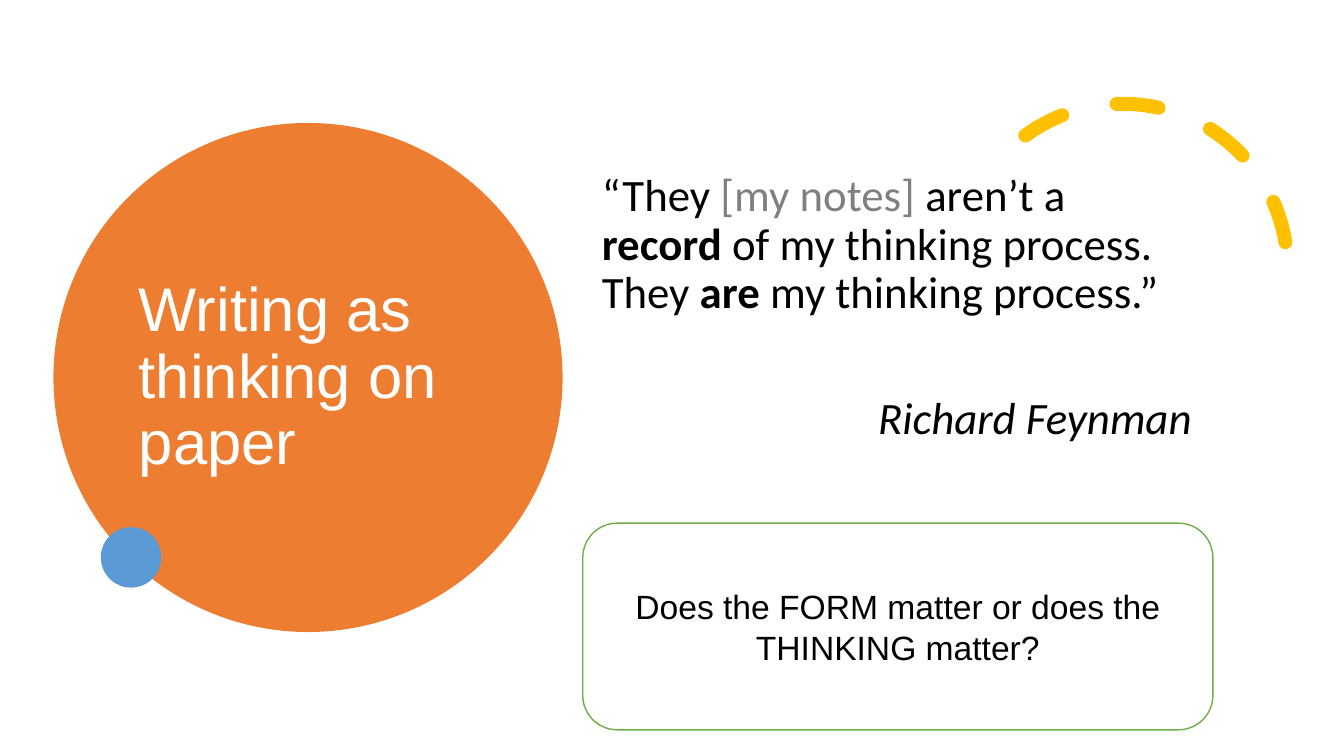
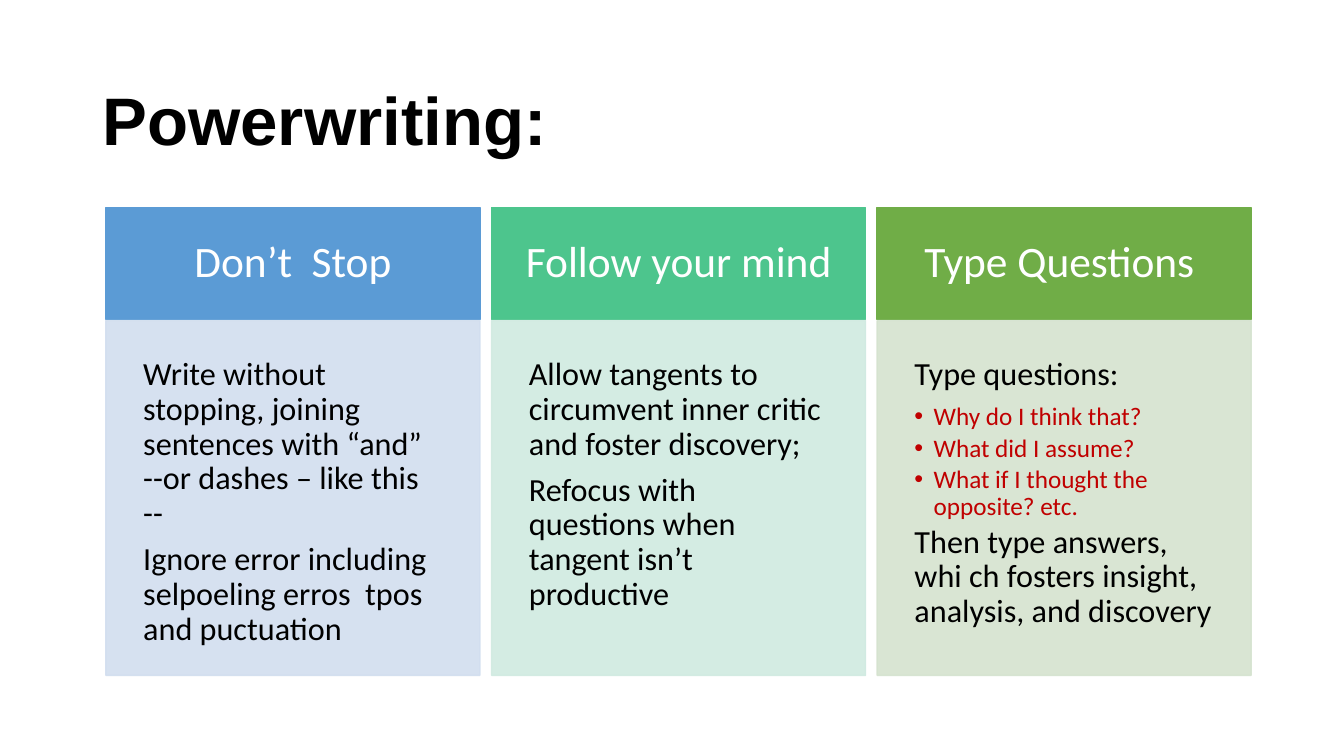
"""Builds two slides on writing as thinking, saved as out.pptx."""
from lxml.etree import SubElement
from pptx import Presentation
from pptx.dml.color import RGBColor as RGB
from pptx.enum.dml import MSO_LINE
from pptx.enum.shapes import MSO_SHAPE as SHAPE
from pptx.enum.text import MSO_ANCHOR as ANCHOR, PP_ALIGN as ALIGN
from pptx.oxml.ns import qn
from pptx.util import Inches, Pt

COLORS = {
    "white": "FFFFFF", "black": "000000", "gray": "808080", "red": "C00000",
    "orange": "ED7D31", "gold": "FFC000", "blue": "5B9BD5", "teal": "4DC58D",
    "green": "70AD47", "pale_blue": "D2DEEF", "pale_teal": "D0EAE1",
    "pale_green": "D5E3CF",
}
SLIDE_W, SLIDE_H = 13.33, 7.5
HEAD_FONT, BODY_FONT = "Arial", "Calibri"
COL_LEFT, COL_W, COL_SPAN = 1.05, 3.71, 11.36
HEADER_TOP, HEADER_H, BODY_TOP, BODY_H = 2.06, 1.11, 3.18, 3.52


def rgb(name):
    """Return the named colour."""
    return RGB.from_string(COLORS[name])


def set_alpha(fill_parent, percent):
    """Make the solid colours below an element partly opaque."""
    for clr in fill_parent.iter(qn("a:srgbClr")):
        SubElement(clr, qn("a:alpha"), val=str(percent * 1000))


def add_shape(slide, kind, box, fill=None, line=None, width=1, alpha=None):
    """Add a flat preset shape."""
    sp = slide.shapes.add_shape(kind, *map(Inches, box))
    sp.shadow.inherit = False
    if fill:
        sp.fill.solid()
        sp.fill.fore_color.rgb = rgb(fill)
    else:
        sp.fill.background()
    if line:
        sp.line.color.rgb = rgb(line)
        sp.line.width = Pt(width)
    else:
        sp.line.fill.background()
    if alpha:
        set_alpha(sp._element.spPr, alpha)
    return sp


def set_frame(sp, anchor, inset=None):
    """Prepare a wrapped text frame and return it."""
    tf = sp.text_frame
    tf.word_wrap = True
    tf.vertical_anchor = anchor
    if inset is not None:
        tf.margin_left = tf.margin_right = Inches(inset)
        tf.margin_top = tf.margin_bottom = Inches(inset)
    return tf


def add_text_box(slide, box, anchor=ANCHOR.TOP):
    """Add a text box and return its frame."""
    return set_frame(slide.shapes.add_textbox(*map(Inches, box)), anchor)


def add_paragraph(tf, align=ALIGN.LEFT, spacing=0.9, before=0, after=0):
    """Return the unused first paragraph or a new one, formatted."""
    p = tf.paragraphs[0]
    if p.runs:
        p = tf.add_paragraph()
    p.alignment = align
    p.line_spacing = spacing
    p.space_before, p.space_after = Pt(before), Pt(after)
    return p


def add_run(p, text, size, font=BODY_FONT, color="black", bold=False, italic=False):
    """Append a formatted run."""
    r = p.add_run()
    r.text = text
    r.font.size, r.font.name = Pt(size), font
    r.font.bold, r.font.italic = bold, italic
    r.font.color.rgb = rgb(color)


def add_title(slide, box, text, size, **style):
    """Add a slide title, centred vertically in its box."""
    tf = add_text_box(slide, box, ANCHOR.MIDDLE)
    add_run(add_paragraph(tf), text, size, HEAD_FONT, **style)


def add_bullet(tf, text):
    """Append a small red bulleted line."""
    p = add_paragraph(tf, after=3)
    pPr = p._p.get_or_add_pPr()
    indent = Inches(0.19)
    pPr.set("marL", str(indent))
    pPr.set("indent", str(-indent))
    SubElement(pPr, qn("a:buFont"), typeface="Arial")
    SubElement(pPr, qn("a:buChar"), char="•")
    add_run(p, text, 18, color="red")


def add_dashed_arc(slide, box):
    """Add the round-capped dashed arc."""
    sp = add_shape(slide, SHAPE.ARC, box, line="gold", width=10)
    sp.adjustments[0], sp.adjustments[1] = 158.17, 17.81
    sp.rotation = 330.2
    sp.line.dash_style = MSO_LINE.DASH
    sp._element.spPr.find(qn("a:ln")).set("cap", "rnd")


def add_column(slide, index, color, heading, items):
    """Add a headed column; a list among the items becomes bullets."""
    gap = (COL_SPAN - 3 * COL_W) / 2
    left = COL_LEFT + index * (COL_W + gap)
    header = add_shape(slide, SHAPE.RECTANGLE, (left, HEADER_TOP, COL_W, HEADER_H),
                       color, color)
    tf = set_frame(header, ANCHOR.MIDDLE, 0.29)
    add_run(add_paragraph(tf, ALIGN.CENTER), heading, 31, color="white")
    pale = "pale_" + color
    body = add_shape(slide, SHAPE.RECTANGLE, (left, BODY_TOP, COL_W, BODY_H),
                     pale, pale, alpha=90)
    tf = set_frame(body, ANCHOR.TOP, 0.37)
    for item in items:
        if isinstance(item, list):
            for text in item:
                add_bullet(tf, text)
        else:
            add_run(add_paragraph(tf, after=8), item, 23)


def build_quote_slide(slide):
    """Build the quotation slide."""
    add_shape(slide, SHAPE.OVAL, (0.53, 1.22, 5.05, 5.05), "orange")
    add_title(slide, (1.28, 1.53, 3.54, 4.45), "Writing as thinking on paper", 44,
              color="white")
    add_dashed_arc(slide, (9.5, 1.03, 3.27, 3.27))
    add_shape(slide, SHAPE.OVAL, (1, 5.23, 0.6, 0.6), "blue")

    tf = add_text_box(slide, (5.87, 1.67, 6.05, 4.3))
    p = add_paragraph(tf, before=10)
    for text, style in (
        ("“They ", {}),
        ("[my notes] ", {"color": "gray"}),
        ("aren’t a ", {}),
        ("record", {"bold": True}),
        (" of my thinking process. They ", {}),
        ("are", {"bold": True}),
        (" my thinking process.”", {}),
    ):
        add_run(p, text, 32, **style)
    add_run(add_paragraph(tf, ALIGN.RIGHT, before=55), "Richard Feynman", 32, italic=True)

    question = add_shape(slide, SHAPE.ROUNDED_RECTANGLE, (5.78, 5.19, 6.25, 2.05),
                         "white", "green")
    p = add_paragraph(set_frame(question, ANCHOR.MIDDLE), ALIGN.CENTER, 1.0)
    add_run(p, "Does the FORM matter or does the THINKING matter?", 24, HEAD_FONT)


def build_powerwriting_slide(slide):
    """Build the three-column slide."""
    add_title(slide, (0.92, 0.61, 11.5, 1.24), "Powerwriting:", 48, bold=True)
    columns = (
        ("blue", "Don’t  Stop", (
            "Write without stopping, joining sentences with “and” "
            "--or dashes – like this --",
            "Ignore error including selpoeling erros  tpos and puctuation")),
        ("teal", "Follow your mind", (
            "Allow tangents to circumvent inner critic and foster discovery;",
            "Refocus with questions when tangent isn’t productive")),
        ("green", "Type Questions ", (
            "Type questions:",
            ["Why do I think that?", "What did I assume?",
             "What if I thought the opposite? etc."],
            "Then type answers, whi ch fosters insight, analysis, and discovery")),
    )
    for index, column in enumerate(columns):
        add_column(slide, index, *column)


def main():
    """Build and save the presentation."""
    prs = Presentation()
    prs.slide_width, prs.slide_height = Inches(SLIDE_W), Inches(SLIDE_H)
    for build in (build_quote_slide, build_powerwriting_slide):
        build(prs.slides.add_slide(prs.slide_layouts[6]))
    prs.save("out.pptx")


if __name__ == "__main__":
    main()
